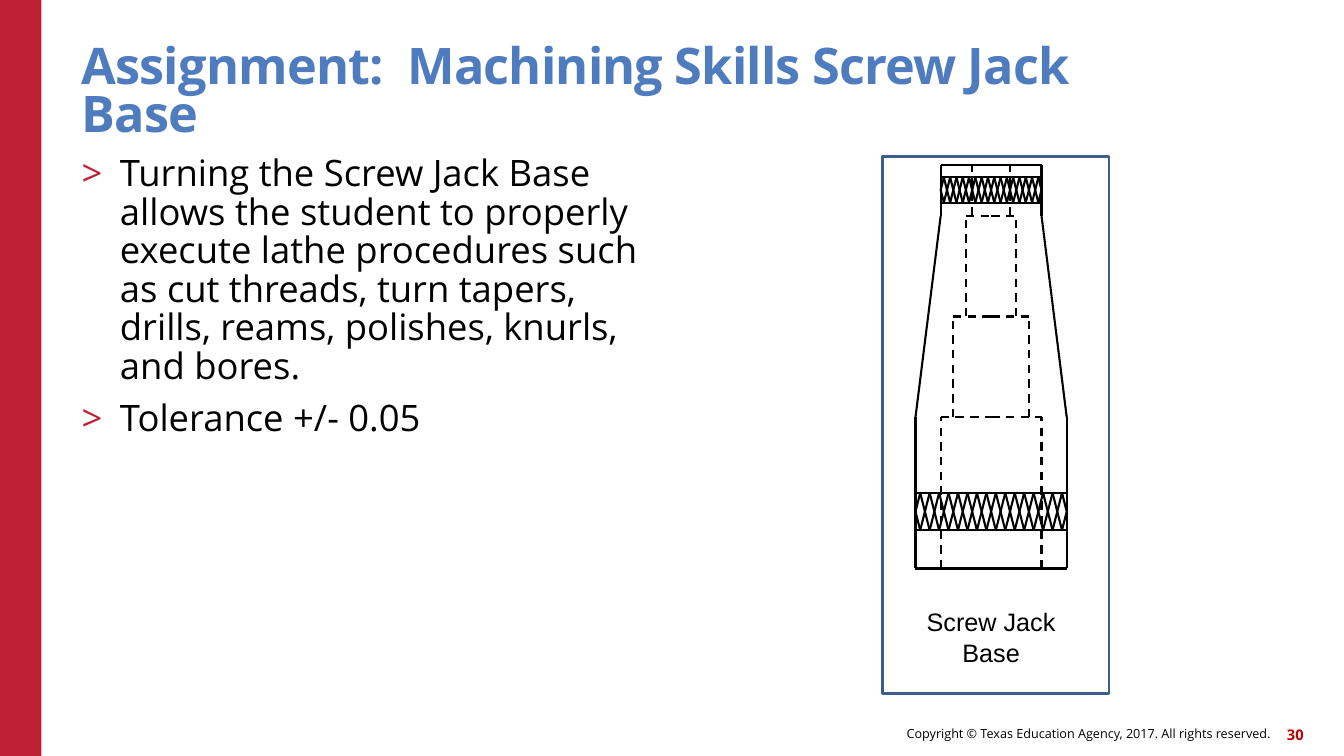
from lxml import etree
from pptx import Presentation
from pptx.dml.color import RGBColor
from pptx.enum import dml, shapes, text
from pptx.oxml import ns
from pptx.util import Inches, Pt

COLORS = {"red": "C02033", "number": "C00000", "title": "4E7CBE",
          "frame": "3A5F8C", "white": "FFFFFF", "ink": "000000"}
CENTER = 9.83
BORE = [(1.64, 2.14, 0.19), (2.14, 3.14, 0.25), (3.14, 4.14, 0.38), (4.14, 5.64, 0.5)]
OUTLINE = [(0.5, 1.64), (0.5, 2.14), (0.75, 4.14), (0.75, 5.64)]


def rgb(name):
    return RGBColor.from_string(COLORS[name])


def apply(obj, values):
    for name, value in values.items():
        setattr(obj, name, value)


def place(sp, box):
    apply(sp, dict(zip(("left", "top", "width", "height"), map(Inches, box))))


def add_text(p, words, color, **font):
    r = p.add_run()
    r.text = words
    apply(r.font, {"name": "Open Sans", **font})
    r.font.color.rgb = rgb(color)
    return r


def set_frame(tf, anchor, margin=0):
    apply(tf, {"word_wrap": True, "auto_size": text.MSO_AUTO_SIZE.NONE,
               "vertical_anchor": anchor})
    for side in ("left", "top", "right", "bottom"):
        setattr(tf, f"margin_{side}", Inches(margin))


def add_rect(s, box, fill, line=None):
    sp = s.shapes.add_shape(shapes.MSO_SHAPE.RECTANGLE, *map(Inches, box))
    sp.shadow.inherit = False
    sp.fill.solid()
    sp.fill.fore_color.rgb = rgb(fill)
    if line:
        sp.line.color.rgb = rgb(line)
        sp.line.width = Pt(2)
    else:
        sp.line.fill.background()


def add_label(s, box, words, color, **font):
    tf = s.shapes.add_textbox(*map(Inches, box)).text_frame
    set_frame(tf, text.MSO_ANCHOR.MIDDLE)
    p = tf.paragraphs[0]
    p.alignment = text.PP_ALIGN.RIGHT
    add_text(p, words, color, **font)


def add_title(s, words):
    sp = s.shapes.title
    place(sp, (0.81, 0.45, 11, 0.96))
    set_frame(sp.text_frame, text.MSO_ANCHOR.BOTTOM)
    p = sp.text_frame.paragraphs[0]
    apply(p, {"alignment": text.PP_ALIGN.LEFT, "line_spacing": 0.79})
    r = add_text(p, words, "title", size=Pt(36), bold=True)
    r.font._element.set("spc", "-60")


def add_bullet(p):
    pPr = p._p.get_or_add_pPr()
    pPr.set("marL", str(Inches(0.38)))
    pPr.set("indent", str(-Inches(0.38)))
    color = etree.SubElement(pPr, ns.qn("a:buClr"))
    etree.SubElement(color, ns.qn("a:srgbClr"), val=COLORS["red"])
    etree.SubElement(pPr, ns.qn("a:buFont"), typeface="Open Sans")
    etree.SubElement(pPr, ns.qn("a:buChar"), char=">")


def add_list(s, items):
    sp = s.placeholders[1]
    place(sp, (0.81, 1.55, 5.86, 5.18))
    tf = sp.text_frame
    set_frame(tf, text.MSO_ANCHOR.TOP)
    for i, words in enumerate(items):
        p = tf.add_paragraph() if i else tf.paragraphs[0]
        add_bullet(p)
        apply(p, {"level": 1, "line_spacing": 0.88, "space_before": Pt(10 if i else 0),
                  "alignment": text.PP_ALIGN.LEFT})
        add_text(p, words, "ink", size=Pt(26))


def add_line(group, x1, y1, x2, y2, dashed=False):
    ln = group.shapes.add_connector(shapes.MSO_CONNECTOR.STRAIGHT,
                                    *map(Inches, (x1, y1, x2, y2)))
    ln.line.color.rgb = rgb("ink")
    ln.line.width = Pt(1.5)
    if dashed:
        ln.line.dash_style = dml.MSO_LINE.DASH
    etree.SubElement(ln._element.spPr, ns.qn("a:effectLst"))


def add_knurl(group, half, top, bottom):
    pitch = half / 8
    middle = (top + bottom) / 2
    first = CENTER - 7.5 * pitch
    for y in (top, bottom):
        add_line(group, CENTER - half, y, CENTER + half, y)
    for i in range(15):
        x = first + i * pitch
        add_line(group, x, bottom, x + pitch, top)
        add_line(group, x, top, x + pitch, bottom)
    for side in (-1, 1):
        for y in (top, bottom):
            add_line(group, CENTER + side * 7.5 * pitch, y, CENTER + side * half, middle)


def add_screw_jack(s):
    group = s.shapes.add_group_shape()
    for side in (-1, 1):
        for (w1, y1), (w2, y2) in zip(OUTLINE, OUTLINE[1:]):
            add_line(group, CENTER + side * w1, y1, CENTER + side * w2, y2)
        for top, bottom, half in BORE:
            x = CENTER + side * half
            add_line(group, x, bottom, x, top, dashed=True)
    for half, y in (OUTLINE[0], OUTLINE[-1]):
        add_line(group, CENTER - half, y, CENTER + half, y)
    for top, _, half in BORE[1:]:
        add_line(group, CENTER - half, top, CENTER, top, dashed=True)
        add_line(group, CENTER, top, CENTER + half, top, dashed=True)
    add_knurl(group, 0.5, 1.76, 2.01)
    add_knurl(group, 0.75, 4.89, 5.26)


def add_caption(s, lines):
    tf = s.shapes.add_textbox(*map(Inches, (9.08, 5.97, 1.5, 0.71))).text_frame
    set_frame(tf, text.MSO_ANCHOR.TOP, 0.05)
    for i, words in enumerate(lines):
        p = tf.add_paragraph() if i else tf.paragraphs[0]
        p.alignment = text.PP_ALIGN.CENTER
        add_text(p, words, "ink", name="Arial", size=Pt(18))


def main():
    prs = Presentation()
    apply(prs, {"slide_width": Inches(13.33), "slide_height": Inches(7.5)})
    s = prs.slides.add_slide(prs.slide_layouts[1])
    add_rect(s, (0, 0, 0.41, 7.5), "red")
    add_label(s, (6.14, 7.12, 6.46, 0.32),
              "Copyright © Texas Education Agency, 2017. All rights reserved.",
              "ink", size=Pt(9))
    add_label(s, (12.51, 7.13, 0.42, 0.32), "30", "number", size=Pt(10.5), bold=True)
    add_title(s, "Assignment:  Machining Skills Screw Jack Base")
    add_list(s, [
        "Turning the Screw Jack Base allows the student to properly execute lathe "
        "procedures such as cut threads, turn tapers, drills, reams, polishes, "
        "knurls, and bores.",
        "Tolerance +/- 0.05",
    ])
    add_rect(s, (8.75, 1.55, 2.25, 5.33), "white", "frame")
    add_screw_jack(s)
    add_caption(s, ["Screw Jack", "Base"])
    prs.save("out.pptx")


if __name__ == "__main__":
    main()
